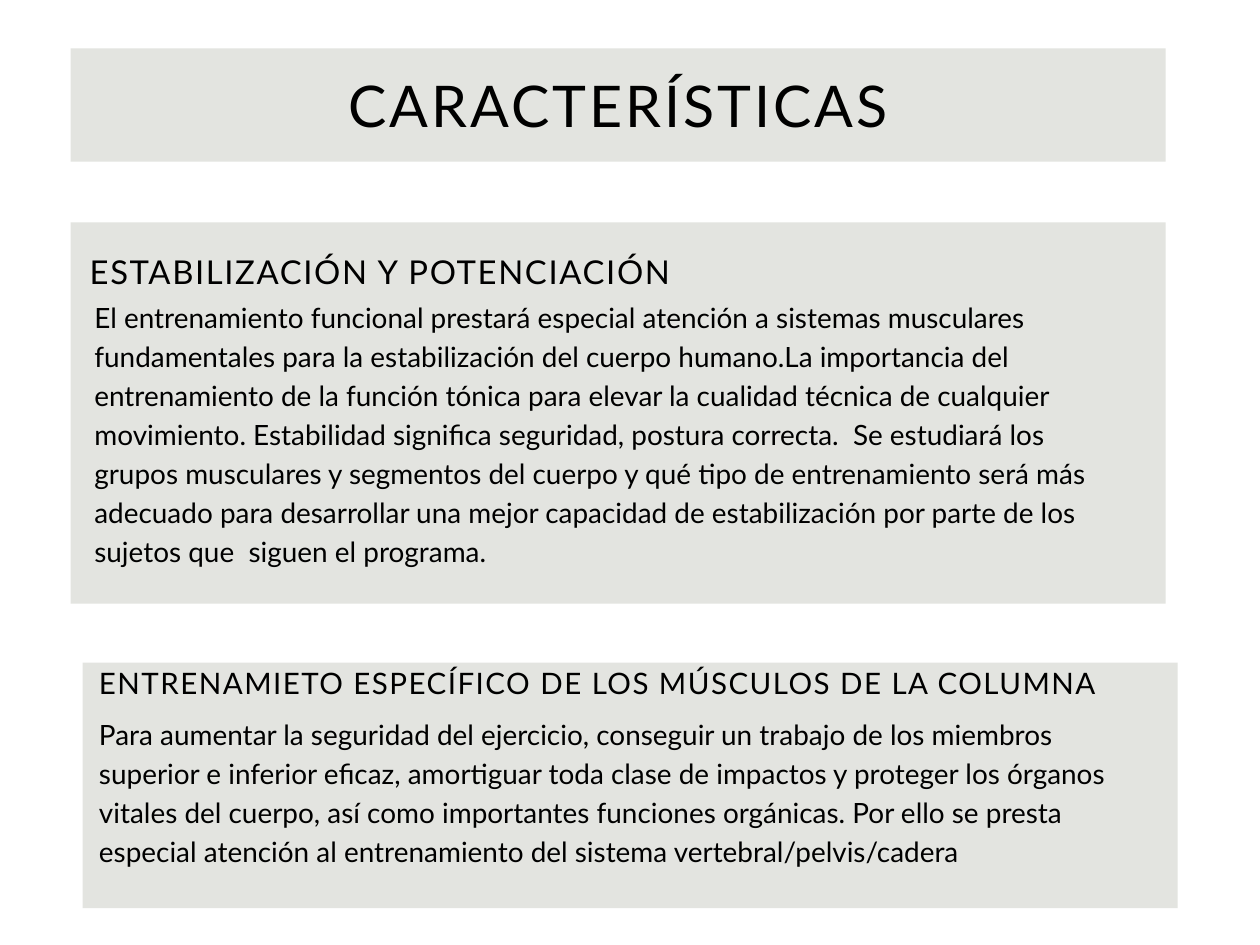
import pptx
import pptx.dml.color
import pptx.enum.shapes
import pptx.enum.text
import pptx.util

Cm = pptx.util.Cm
Pt = pptx.util.Pt
ALIGN = pptx.enum.text.PP_ALIGN

FONT = "Lato"
PANEL_COLOR = "E3E4E0"
TEXT_COLOR = "000000"
LINE_FACTOR = 1.4
PANEL_WIDTH = 23.55
HEADING_WIDTH = 23.37
BODY_WIDTH = 22.3
BODY_SIZE = 17

STABILITY_TEXT = (
    "El entrenamiento funcional prestará especial atención a sistemas musculares "
    "fundamentales para la estabilización del cuerpo humano.La importancia del "
    "entrenamiento de la función tónica para elevar la cualidad técnica de cualquier "
    "movimiento. Estabilidad significa seguridad, postura correcta.  Se estudiará los "
    "grupos musculares y segmentos del cuerpo y qué tipo de entrenamiento será más "
    "adecuado para desarrollar una mejor capacidad de estabilización por parte de los "
    "sujetos que  siguen el programa."
)
SPINE_TEXT = (
    "Para aumentar la seguridad del ejercicio, conseguir un trabajo de los miembros "
    "superior e inferior eficaz, amortiguar toda clase de impactos y proteger los órganos "
    "vitales del cuerpo, así como importantes funciones orgánicas. Por ello se presta "
    "especial atención al entrenamiento del sistema vertebral/pelvis/cadera"
)


def color(hex_string):
    return pptx.dml.color.RGBColor.from_string(hex_string)


def add_panel(slide, left, top, height):
    panel = slide.shapes.add_shape(
        pptx.enum.shapes.MSO_SHAPE.RECTANGLE,
        Cm(left), Cm(top), Cm(PANEL_WIDTH), Cm(height),
    )
    panel.shadow.inherit = False
    panel.fill.solid()
    panel.fill.fore_color.rgb = color(PANEL_COLOR)
    panel.line.fill.background()


def add_text(slide, text, *, left, top, width, height, size=BODY_SIZE,
             letter_spacing=0, align=ALIGN.LEFT):
    box = slide.shapes.add_textbox(Cm(left), Cm(top), Cm(width), Cm(height))
    frame = box.text_frame
    frame.word_wrap = True
    frame.margin_left = frame.margin_top = 0
    frame.margin_right = frame.margin_bottom = 0
    paragraph = frame.paragraphs[0]
    paragraph.alignment = align
    paragraph.line_spacing = Pt(size * LINE_FACTOR)
    run = paragraph.add_run()
    run.text = text
    run.font.name = FONT
    run.font.size = Pt(size)
    run.font.color.rgb = color(TEXT_COLOR)
    if letter_spacing:
        # Letter spacing is stored in hundredths of a point
        run._r.get_or_add_rPr().set("spc", str(round(letter_spacing * 100)))


def main():
    presentation = pptx.Presentation()
    presentation.slide_width = Cm(27.1)
    presentation.slide_height = Cm(20.32)
    slide = presentation.slides.add_slide(presentation.slide_layouts[6])

    # Stabilization section
    add_panel(slide, 1.52, 4.78, 8.2)
    add_text(slide, "ESTABILIZACIÓN Y POTENCIACIÓN", left=1.93, top=5.28,
             width=HEADING_WIDTH, height=0.99, size=20, letter_spacing=1)
    add_text(slide, STABILITY_TEXT, left=2.03, top=6.35, width=BODY_WIDTH, height=5.72)

    # Title banner
    add_panel(slide, 1.52, 1.04, 2.44)
    add_text(slide, "CARACTERÍSTICAS", left=4.45, top=1.27, width=17.7, height=1.7,
             size=35, letter_spacing=1.8, align=ALIGN.CENTER)

    # Spine training section
    add_panel(slide, 1.78, 14.25, 5.28)
    add_text(slide, "ENTRENAMIETO ESPECÍFICO DE LOS MÚSCULOS DE LA COLUMNA",
             left=2.13, top=14.17, width=HEADING_WIDTH, height=0.86,
             size=18, letter_spacing=0.9)
    add_text(slide, SPINE_TEXT, left=2.13, top=15.32, width=BODY_WIDTH, height=4.09)

    presentation.save("out.pptx")


if __name__ == "__main__":
    main()
